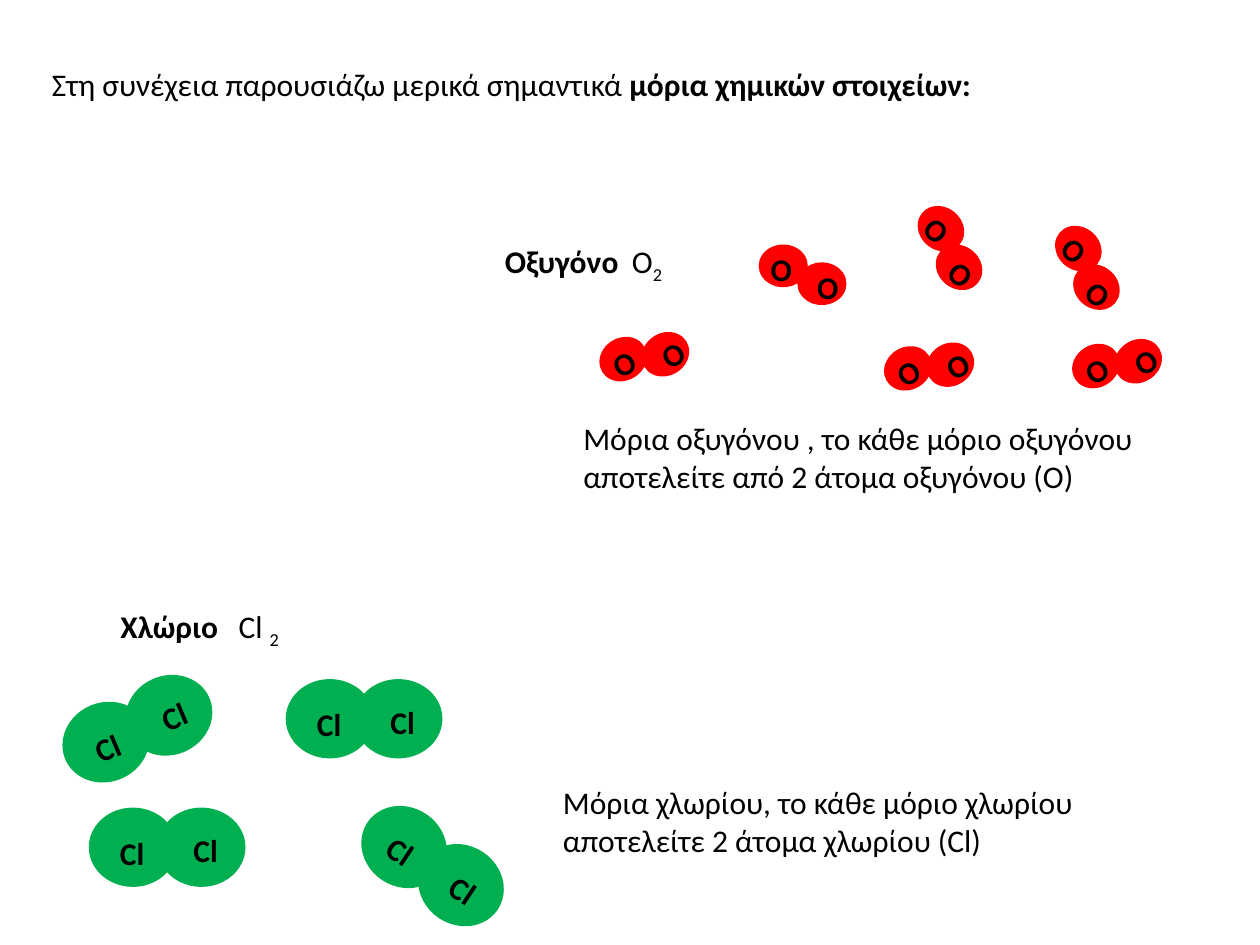
"""Build a slide showing oxygen and chlorine molecules."""
from math import cos, radians, sin

from lxml import etree
from pptx import Presentation
from pptx.dml.color import RGBColor
from pptx.enum.shapes import MSO_SHAPE
from pptx.enum.text import MSO_ANCHOR, MSO_AUTO_SIZE, PP_ALIGN
from pptx.oxml.ns import qn
from pptx.util import Cm, Pt

OVAL = MSO_SHAPE.OVAL
TOP = MSO_ANCHOR.TOP
LEFT = PP_ALIGN.LEFT
FIT_SHAPE = MSO_AUTO_SIZE.SHAPE_TO_FIT_TEXT

COLOURS = {"text": "000000", "oxygen": "FF0000", "chlorine": "00B050"}
FONT_NAME = "Calibri"
FONT_SIZE = 18

TITLE = {
    "box": (0.79, 1.19, 19.46, 1.02),
    "runs": [("Στη συνέχεια παρουσιάζω μερικά σημαντικά ", ""),
             ("μόρια χημικών στοιχείων:", "bold")],
}
TEXTS = [
    {"box": (9.93, 4.75, 3.89, 1.02), "tab": 2.56,
     "runs": [("Οξυγόνο", "bold"), ("\tΟ", ""), ("2", "subscript")]},
    {"box": (11.51, 8.33, 13.49, 1.8),
     "runs": [("Μόρια οξυγόνου , το κάθε μόριο οξυγόνου "
               "αποτελείτε από 2 άτομα οξυγόνου (O)", "")]},
    {"box": (2.18, 12.12, 3.73, 1.02), "tab": 2.38,
     "runs": [("Χλώριο", "bold"), ("\tCl ", ""), ("2", "subscript")]},
    {"box": (11.1, 15.67, 11.3, 1.8),
     "runs": [("Μόρια χλωρίου, το κάθε μόριο χλωρίου "
               "αποτελείτε 2 άτομα χλωρίου (Cl)", "")]},
]
ELEMENTS = [
    {"symbol": "Ο", "colour": "oxygen",
     "atom_size": (0.99, 0.86), "label_size": (0.79, 0.89),
     "parts": [("atom", 0.39, 0.18), ("atom", -0.39, -0.18),
               ("label", 0.44, 0.19), ("label", -0.5, -0.17)],
     "molecules": [(16.18, 5.54, 0), (21.92, 5.4, 40.1),
                   (18.73, 7.39, 330.2), (19.15, 5, 40.1),
                   (12.99, 7.19, 328.7), (22.52, 7.33, 328.7)]},
    {"symbol": "Cl", "colour": "chlorine",
     "atom_size": (1.78, 1.6), "label_size": (1.02, 1.02),
     "parts": [("atom", -0.69, 0), ("label", -0.69, 0.11),
               ("atom", 0.69, 0), ("label", 0.79, 0.06)],
     "molecules": [(7.34, 14.49, 0), (3.37, 17.08, 0),
                   (2.77, 14.69, 336.9), (8.72, 17.46, 33.8)]},
]


def colour(name):
    return RGBColor.from_string(COLOURS[name])


def write_runs(shape, runs, wrap=True, tab=None):
    text_frame = shape.text_frame
    text_frame.word_wrap = wrap
    text_frame.auto_size = FIT_SHAPE
    text_frame.vertical_anchor = TOP
    paragraph = text_frame.paragraphs[0]
    paragraph.alignment = LEFT
    if tab:
        properties = paragraph._p.get_or_add_pPr()
        tab_list = etree.SubElement(properties, qn("a:tabLst"))
        etree.SubElement(tab_list, qn("a:tab"), pos=str(Cm(tab)), algn="l")
    for text, style in runs:
        run = paragraph.add_run()
        run.text = text
        run.font.name = FONT_NAME
        run.font.size = Pt(FONT_SIZE)
        run.font.bold = style == "bold"
        run.font.color.rgb = colour("text")
        if style == "subscript":
            run._r.get_or_add_rPr().set("baseline", "-25000")


def add_molecule(slide, element, centre_x, centre_y, angle):
    group = slide.shapes.add_group_shape()
    cosine, sine = cos(radians(angle)), sin(radians(angle))
    for kind, across, down in element["parts"]:
        width, height = element[kind + "_size"]
        left = centre_x + across * cosine - down * sine - width / 2
        top = centre_y + across * sine + down * cosine - height / 2
        box = [Cm(value) for value in (left, top, width, height)]
        if kind == "atom":
            shape = group.shapes.add_shape(OVAL, *box)
            shape.shadow.inherit = False
            shape.fill.solid()
            shape.fill.fore_color.rgb = colour(element["colour"])
            shape.line.fill.background()
        else:
            shape = group.shapes.add_textbox(*box)
            write_runs(shape, [(element["symbol"], "bold")], wrap=False)
        shape.rotation = angle


def main():
    presentation = Presentation()
    presentation.slide_width, presentation.slide_height = Cm(25.4), Cm(19.05)
    slide = presentation.slides.add_slide(presentation.slide_layouts[5])
    title = slide.shapes.title
    title.left, title.top, title.width, title.height = map(Cm, TITLE["box"])
    write_runs(title, TITLE["runs"])
    for item in TEXTS:
        textbox = slide.shapes.add_textbox(*map(Cm, item["box"]))
        write_runs(textbox, item["runs"], tab=item.get("tab"))
    for element in ELEMENTS:
        for molecule in element["molecules"]:
            add_molecule(slide, element, *molecule)
    presentation.save("out.pptx")


if __name__ == "__main__":
    main()
